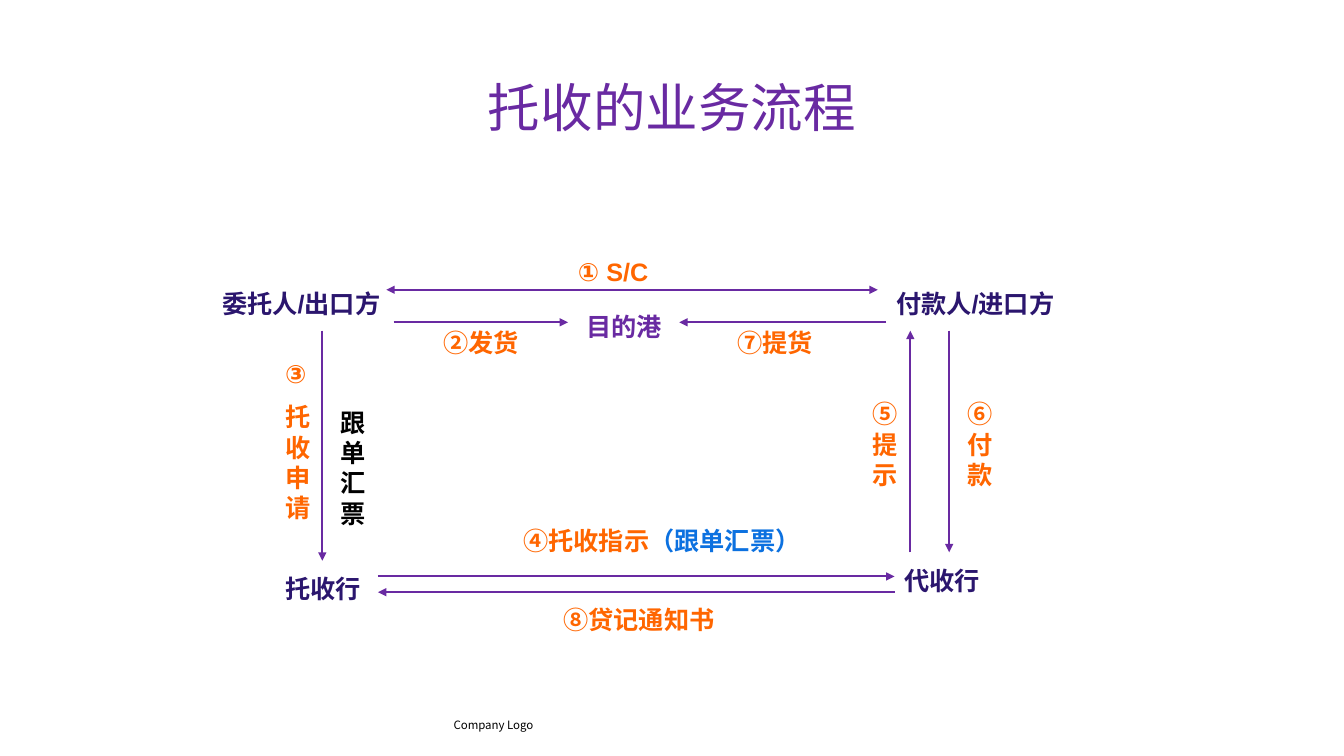
from lxml.etree import SubElement as Sub
from pptx import Presentation
from pptx.dml.color import RGBColor
from pptx.enum.shapes import MSO_CONNECTOR as Line
from pptx.enum.text import MSO_ANCHOR as Anchor, MSO_AUTO_SIZE as Fit, PP_ALIGN as Align
from pptx.oxml.ns import qn
from pptx.util import Pt

PX = 9525
WIDE, HIGH = 1280, 720
VIOLET = RGBColor(0x69, 0x2A, 0xA2)
NAVY = RGBColor(0x2B, 0x16, 0x6E)
ORANGE = RGBColor(0xFF, 0x66, 0x00)
BLUE = RGBColor(0x0C, 0x71, 0xE0)
BLACK = RGBColor(0, 0, 0)
LATIN, HAN = "Arial", "Noto Sans CJK SC"

TITLE = "托收的业务流程"
FOOTER = "Company Logo"
LABELS = [
    ((202, 270, 181, 38), [[("委托人/出口方", NAVY)]]),
    ((844, 270, 189, 38), [[("付款人/进口方", NAVY)]]),
    ((262, 541, 106, 38), [[("托收行", NAVY)]]),
    ((852, 534, 106, 38), [[("代收行", NAVY)]]),
    ((549, 292, 98, 38), [[("目的港", VIOLET)]]),
    ((541, 239, 90, 38), [[("① S/C", ORANGE)]]),
    ((413, 307, 98, 38), [[("②发货", ORANGE)]]),
    ((262, 337, 37, 168), [[("③", ORANGE)], [("托收申请", ORANGE)]]),
    ((315, 383, 37, 125), [[("跟单汇票", BLACK)]]),
    ((489, 496, 287, 38), [[("④托收指示", ORANGE), ("（跟单汇票）", BLUE)]]),
    ((822, 375, 30, 96), [[("⑤提示", ORANGE)]]),
    ((912, 375, 30, 96), [[("⑥付款", ORANGE)]]),
    ((693, 307, 98, 38), [[("⑦提货", ORANGE)]]),
    ((527, 571, 166, 38), [[("⑧贷记通知书", ORANGE)]]),
]
ARROWS = [
    ((368, 276, 836, 276), ("headEnd", "tailEnd")),
    ((375, 307, 541, 307), ("tailEnd",)),
    ((844, 307, 647, 307), ("tailEnd",)),
    ((307, 315, 307, 534), ("tailEnd",)),
    ((867, 526, 867, 315), ("tailEnd",)),
    ((904, 315, 904, 526), ("tailEnd",)),
    ((360, 549, 852, 549), ("tailEnd",)),
    ((852, 564, 360, 564), ("tailEnd",)),
]


def emu(nums):
    return [n * PX for n in nums]


def style(run, size, color, face, bold=False):
    font = run.font
    font.size, font.bold, font.name = Pt(size), bold, face
    font.color.rgb = color
    Sub(font._element, qn("a:ea")).set("typeface", face)


def add_box(slide, area):
    frame = slide.shapes.add_textbox(*emu(area)).text_frame
    frame.word_wrap = True
    return frame


def add_label(slide, area, paras):
    frame = add_box(slide, area)
    for i, parts in enumerate(paras):
        para = frame.add_paragraph() if i else frame.paragraphs[0]
        if i:
            para.space_before = Pt(9)
        for text, color in parts:
            run = para.add_run()
            run.text = text
            style(run, 18, color, LATIN, True)


def add_arrow(slide, ends, tips):
    arrow = slide.shapes.add_connector(Line.STRAIGHT, *emu(ends))
    arrow.line.color.rgb = VIOLET
    arrow.line.width = Pt(1.5)
    for tip in tips:
        Sub(arrow.line._get_or_add_ln(), qn("a:" + tip)).set("type", "triangle")
    Sub(arrow._element.spPr, qn("a:effectLst"))


def add_title(slide):
    title = slide.shapes.title
    title.left, title.top, title.width, title.height = emu((64, 64, 1152, 74))
    frame = title.text_frame
    frame.text = TITLE
    frame.auto_size = Fit.NONE
    frame.vertical_anchor = Anchor.MIDDLE
    para = frame.paragraphs[0]
    para.alignment = Align.CENTER
    style(para.runs[0], 37.5, VIOLET, HAN)


def add_footer(slide):
    frame = add_box(slide, (432, 663, 416, 34))
    frame.margin_left = frame.margin_right = 0
    frame.margin_top = frame.margin_bottom = 0
    frame.vertical_anchor = Anchor.BOTTOM
    frame.text = FOOTER
    style(frame.paragraphs[0].runs[0], 8.2, BLACK, HAN)


def main():
    deck = Presentation()
    deck.slide_width, deck.slide_height = emu((WIDE, HIGH))
    slide = deck.slides.add_slide(deck.slide_layouts[5])
    add_title(slide)
    add_footer(slide)
    for area, paras in LABELS:
        add_label(slide, area, paras)
    for ends, tips in ARROWS:
        add_arrow(slide, ends, tips)
    deck.save("out.pptx")


if __name__ == "__main__":
    main()
